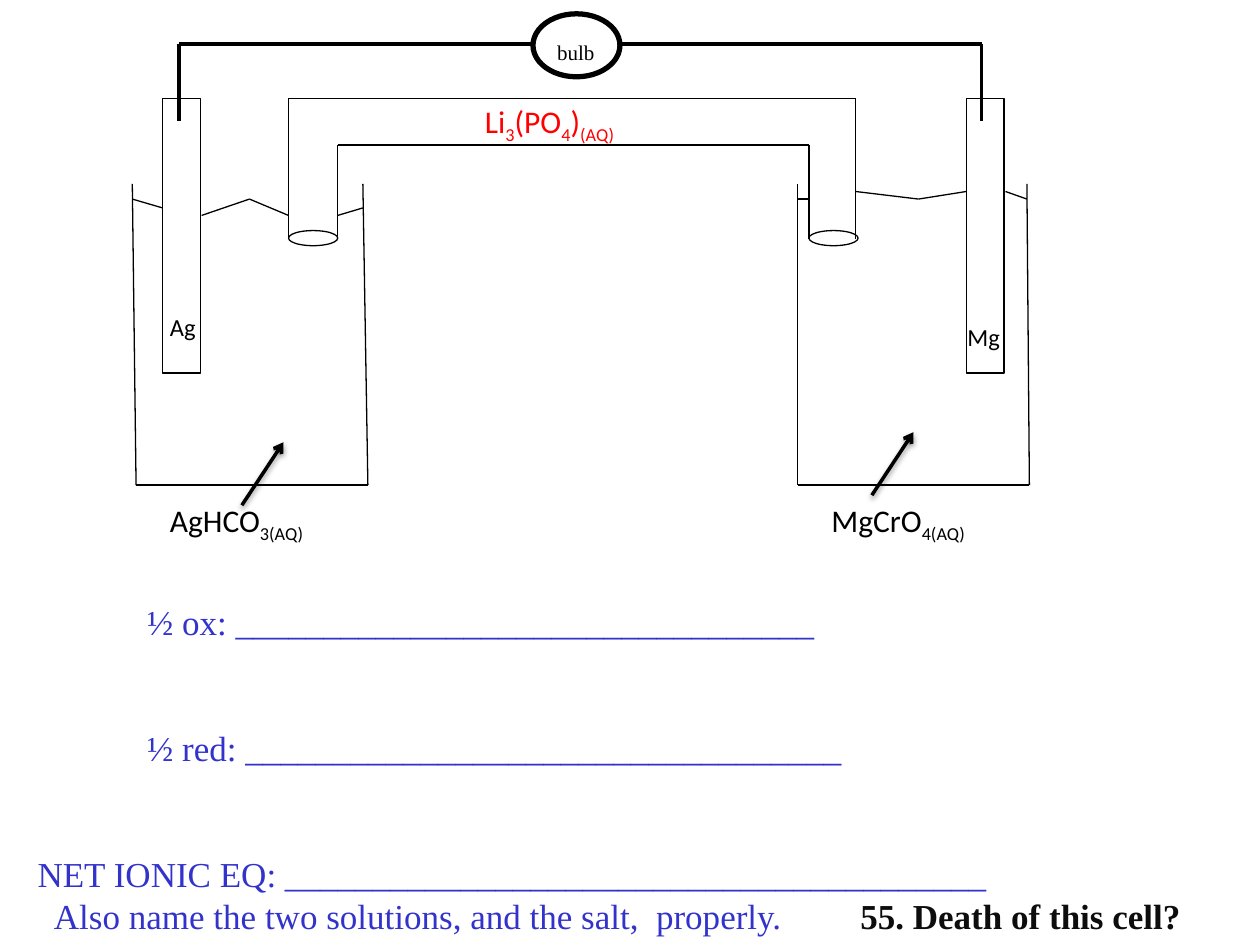
import itertools
from dataclasses import dataclass

import pptx
import pptx.dml.color
import pptx.enum.shapes
import pptx.enum.text
import pptx.oxml
import pptx.oxml.ns
import pptx.util
from pptx.util import Inches, Pt


@dataclass(frozen=True)
class Theme:
    ink: str = "000000"
    paper: str = "FFFFFF"
    salt: str = "FF0000"
    task: str = "3333CC"
    note: str = "0D0D0D"
    sans: str = "Calibri"
    serif: str = "Times New Roman"
    small: int = 12
    metal: int = 14
    label: int = 18
    body: int = 20
    pitch: int = 24
    thin: float = 0.75
    wire: float = 2
    ring: float = 3


THEME = Theme()
NS = pptx.oxml.ns.nsdecls("a")
SHADOW = (
    f'<a:effectLst {NS}><a:outerShdw blurRad="40000" dist="20000" dir="5400000" '
    'rotWithShape="0"><a:srgbClr val="000000"><a:alpha val="38000"/></a:srgbClr>'
    "</a:outerShdw></a:effectLst>"
)


def rgb(code):
    return pptx.dml.color.RGBColor.from_string(code)


def add_line(slide, start, end, width=THEME.thin, effect=f"<a:effectLst {NS}/>"):
    ends = [Inches(v) for v in (*start, *end)]
    line = slide.shapes.add_connector(pptx.enum.shapes.MSO_CONNECTOR.STRAIGHT, *ends)
    line.line.color.rgb = rgb(THEME.ink)
    line.line.width = Pt(width)
    line._element.spPr.append(pptx.oxml.parse_xml(effect))
    return line


def add_trace(slide, points, width=THEME.thin):
    for start, end in itertools.pairwise(points):
        add_line(slide, start, end, width)


def add_arrow(slide, start, end):
    line = add_line(slide, start, end, THEME.wire, SHADOW)
    line.line._get_or_add_ln().append(
        pptx.oxml.parse_xml(f'<a:tailEnd {NS} type="arrow"/>'))


def add_form(slide, kind, box, width=THEME.thin, fill=None):
    form = slide.shapes.add_shape(kind, *map(Inches, box))
    form.shadow.inherit = False
    form.line.color.rgb = rgb(THEME.ink)
    form.line.width = Pt(width)
    if fill:
        form.fill.solid()
        form.fill.fore_color.rgb = rgb(fill)
    else:
        form.fill.background()


def add_box(slide, box):
    frame = slide.shapes.add_textbox(*map(Inches, box)).text_frame
    frame.word_wrap = True
    return frame


def style(run, size, color, font, bold=None):
    run.font.size = Pt(size)
    run.font.color.rgb = rgb(color)
    run.font.name = font
    run.font.bold = bold


def add_label(slide, box, parts, size=THEME.label, color=THEME.ink):
    """Write parts in turn as plain text and subscript."""
    par = add_box(slide, box).paragraphs[0]
    for part, low in zip(parts, itertools.cycle((False, True))):
        run = par.add_run()
        run.text = part
        style(run, size, color, THEME.sans)
        if low:
            run.font._element.set("baseline", "-25000")


def add_lines(slide, box, rows, color=THEME.task, bold=None):
    """Write rows of (text, left margin, blank lines above)."""
    frame = add_box(slide, box)
    frame.text = "\n".join(row[0] for row in rows)
    for par, (_, left, gap) in zip(frame.paragraphs, rows):
        par.line_spacing = Pt(THEME.pitch)
        par.space_before = Pt(gap * THEME.pitch)
        par._p.get_or_add_pPr().set("marL", str(Inches(left)))
        style(par.runs[0], THEME.body, color, THEME.serif, bold)


def draw_cells(slide):
    # Beakers
    add_trace(slide, [(1.05, 1.46), (1.08, 3.85), (2.92, 3.85), (2.88, 1.46)])
    add_trace(slide, [(6.33, 1.46), (6.33, 3.85), (8.17, 3.85), (8.15, 1.46)])
    # Electrodes and mouths of the salt bridge
    shape = pptx.enum.shapes.MSO_SHAPE
    for rod, mouth in ((1.29, 2.29), (7.67, 6.42)):
        add_form(slide, shape.RECTANGLE, (rod, 0.78, 0.3, 2.18))
        add_form(slide, shape.OVAL, (mouth, 1.83, 0.39, 0.12))
    # Walls of the salt bridge
    add_trace(slide, [(2.29, 1.9), (2.29, 0.78), (6.79, 0.78), (6.79, 1.9)])
    add_trace(slide, [(2.68, 1.9), (2.68, 1.15), (6.42, 1.15), (6.42, 1.9)])
    # Liquid surfaces
    for wave in (
        [(1.05, 1.58), (1.29, 1.65)],
        [(1.6, 1.71), (1.98, 1.58), (2.29, 1.71)],
        [(2.68, 1.71), (2.88, 1.65)],
        [(6.33, 1.58), (6.42, 1.58)],
        [(6.79, 1.52), (7.29, 1.58), (7.67, 1.52)],
        [(7.98, 1.52), (8.15, 1.58)],
    ):
        add_trace(slide, wave)


def draw_bulb(slide):
    add_trace(slide, [(1.42, 0.96), (1.42, 0.35), (7.79, 0.35), (7.79, 0.96)],
              THEME.wire)
    add_form(slide, pptx.enum.shapes.MSO_SHAPE.OVAL, (4.23, 0.11, 0.69, 0.5),
             THEME.ring, THEME.paper)
    frame = add_box(slide, (4.35, 0.27, 0.44, 0.25))
    frame.margin_left = frame.margin_right = Inches(0.04)
    frame.margin_top = frame.margin_bottom = Inches(0.04)
    frame.text = "bulb"
    par = frame.paragraphs[0]
    par.alignment = pptx.enum.text.PP_ALIGN.CENTER
    style(par.runs[0], THEME.small, THEME.ink, THEME.serif)


def main():
    deck = pptx.Presentation()
    deck.slide_width, deck.slide_height = Inches(10), Inches(7.5)
    slide = deck.slides.add_slide(deck.slide_layouts[6])

    draw_cells(slide)
    draw_bulb(slide)

    # Chemical labels
    add_label(slide, (1.25, 3.93, 1.58, 0.4), ["AgHCO", "3(AQ)"])
    add_label(slide, (6.5, 3.93, 1.58, 0.4), ["MgCrO", "4(AQ)"])
    add_label(slide, (1.25, 2.43, 0.42, 0.34), ["Ag"], THEME.metal)
    add_label(slide, (7.58, 2.51, 0.67, 0.34), ["Mg"], THEME.metal)
    add_label(slide, (3.75, 0.76, 1.5, 0.4),
              ["Li", "3", "(PO", "4", ")", "(AQ)"], color=THEME.salt)
    add_arrow(slide, (1.92, 4.01), (2.25, 3.51))
    add_arrow(slide, (6.92, 3.93), (7.25, 3.43))

    # Answer lines and question
    add_lines(slide, (0, 4.72, 9.5, 2.79), [
        ("½ ox: " + "_" * 33, 1.07, 0),
        ("½ red: " + "_" * 34, 1.07, 2),
        ("NET IONIC EQ: " + "_" * 40, 0.2, 2),
        ("Also name the two solutions, and the salt,  properly.", 0.33, 0),
    ])
    add_lines(slide, (6.73, 7.05, 2.8, 0.43),
              [("55. Death of this cell?", 0, 0)], THEME.note, True)

    deck.save("out.pptx")


if __name__ == "__main__":
    main()
